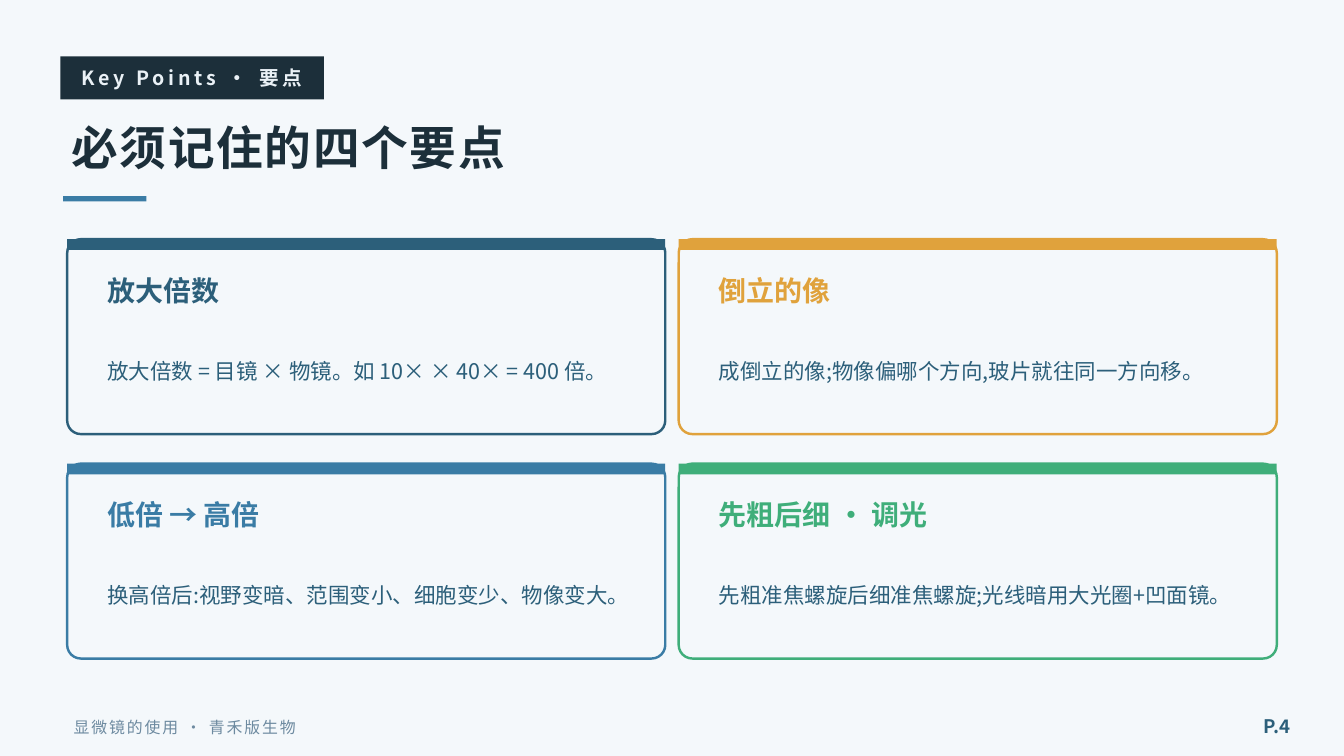
from dataclasses import dataclass

from lxml.etree import SubElement
from pptx import Presentation
from pptx.dml.color import RGBColor
from pptx.enum.shapes import MSO_SHAPE
from pptx.enum.text import MSO_ANCHOR, MSO_AUTO_SIZE, PP_ALIGN
from pptx.oxml.ns import qn
from pptx.shapes.autoshape import Shape
from pptx.slide import Slide
from pptx.util import Inches, Pt

FONT = "Noto Sans CJK SC"
PAPER = RGBColor(0xF4, 0xF8, 0xFB)
INK = RGBColor(0x1C, 0x2F, 0x3A)
LABEL_TEXT = RGBColor(0xEA, 0xF1, 0xF6)
MUTED = RGBColor(0x6D, 0x8A, 0xA0)
NAVY = RGBColor(0x2C, 0x5F, 0x7A)
BLUE = RGBColor(0x3A, 0x7C, 0xA5)
AMBER = RGBColor(0xE0, 0xA2, 0x3C)
GREEN = RGBColor(0x3F, 0xAE, 0x7A)

# Square grid cells, 200 across the slide
SLIDE_WIDTH = Inches(10)
SLIDE_HEIGHT = SLIDE_WIDTH * 9 // 16
CELL = SLIDE_WIDTH // 200


@dataclass(frozen=True)
class Area:
    """A rectangle in grid cells."""
    column: float
    row: float
    columns: float
    rows: float

    def lengths(self) -> tuple[int, ...]:
        cells = (self.column, self.row, self.columns, self.rows)
        return tuple(round(count * CELL) for count in cells)

    def inside(self, column: float, row: float, columns: float, rows: float) -> "Area":
        return Area(self.column + column, self.row + row, columns, rows)


@dataclass(frozen=True)
class TextStyle:
    size: float
    color: RGBColor
    bold: bool = False
    spacing: int = 0
    alignment: PP_ALIGN = PP_ALIGN.LEFT
    line_spacing: float | None = None


@dataclass(frozen=True)
class Card:
    heading: str
    body: str
    color: RGBColor


CARDS = (
    Card("放大倍数", "放大倍数 = 目镜 × 物镜。如 10× × 40× = 400 倍。", NAVY),
    Card("倒立的像", "成倒立的像;物像偏哪个方向,玻片就往同一方向移。", AMBER),
    Card("低倍 → 高倍", "换高倍后:视野变暗、范围变小、细胞变少、物像变大。", BLUE),
    Card("先粗后细 · 调光", "先粗准焦螺旋后细准焦螺旋;光线暗用大光圈+凹面镜。", GREEN),
)
CARD_COLUMNS, CARD_ROWS = 89, 29
COLUMN_STEP, ROW_STEP = 91, 33.4
BODY_STYLE = TextStyle(11.5, NAVY, line_spacing=15)


def write_text(shape: Shape, text: str, style: TextStyle) -> None:
    frame = shape.text_frame
    frame.text = text
    frame.word_wrap = True
    frame.auto_size = MSO_AUTO_SIZE.NONE
    frame.vertical_anchor = MSO_ANCHOR.MIDDLE
    paragraph = frame.paragraphs[0]
    paragraph.alignment = style.alignment
    if style.line_spacing:
        paragraph.line_spacing = Pt(style.line_spacing)
    run = paragraph.runs[0]
    run.font.size = Pt(style.size)
    run.font.bold = style.bold
    run.font.color.rgb = style.color
    run.font.name = FONT
    properties = run.font._element
    SubElement(properties, qn("a:ea")).set("typeface", FONT)
    if style.spacing:
        properties.set("spc", str(style.spacing * 100))


def add_text(slide: Slide, area: Area, text: str, style: TextStyle) -> None:
    write_text(slide.shapes.add_textbox(*area.lengths()), text, style)


def add_block(slide: Slide, area: Area, fill: RGBColor,
              kind: MSO_SHAPE = MSO_SHAPE.RECTANGLE) -> Shape:
    shape = slide.shapes.add_shape(kind, *area.lengths())
    shape.shadow.inherit = False
    shape.fill.solid()
    shape.fill.fore_color.rgb = fill
    shape.line.fill.background()
    return shape


def add_card(slide: Slide, area: Area, card: Card) -> None:
    frame = add_block(slide, area, PAPER, MSO_SHAPE.ROUNDED_RECTANGLE)
    frame.adjustments[0] = 0.07
    frame.line.color.rgb = card.color
    frame.line.width = Pt(1.3)
    add_block(slide, area.inside(0, 0, area.columns, 1.6), card.color)
    text_columns = area.columns - 8
    add_text(slide, area.inside(4, 3.6, text_columns, 8), card.heading,
             TextStyle(15, card.color, bold=True))
    add_text(slide, area.inside(4, 12.4, text_columns, 14), card.body, BODY_STYLE)


def main() -> None:
    presentation = Presentation()
    presentation.slide_width = SLIDE_WIDTH
    presentation.slide_height = SLIDE_HEIGHT
    slide = presentation.slides.add_slide(presentation.slide_layouts[5])
    slide.background.fill.solid()
    slide.background.fill.fore_color.rgb = PAPER

    # Section label
    add_block(slide, Area(9, 8.4, 39.2, 6.4), INK)
    add_text(slide, Area(9, 8.2, 39.2, 6.8), "Key Points · 要点",
             TextStyle(10.5, LABEL_TEXT, True, 2, PP_ALIGN.CENTER))

    # Title and accent rule
    title = slide.shapes.title
    title.left, title.top, title.width, title.height = Area(8.6, 15.6, 180, 12.4).lengths()
    write_text(title, "必须记住的四个要点", TextStyle(25, INK, True, 1))
    add_block(slide, Area(9.4, 29.2, 12.4, 0.8), BLUE)

    # Two by two cards
    for index, card in enumerate(CARDS):
        row, column = divmod(index, 2)
        area = Area(10 + column * COLUMN_STEP, 35.6 + row * ROW_STEP,
                    CARD_COLUMNS, CARD_ROWS)
        add_card(slide, area, card)

    # Footer
    add_text(slide, Area(9, 105.2, 130, 6), "显微镜的使用 · 青禾版生物",
             TextStyle(8.5, MUTED, spacing=1))
    add_text(slide, Area(182, 104.8, 12, 6.4), "P.4",
             TextStyle(10, NAVY, True, alignment=PP_ALIGN.RIGHT))

    presentation.save("out.pptx")


if __name__ == "__main__":
    main()
